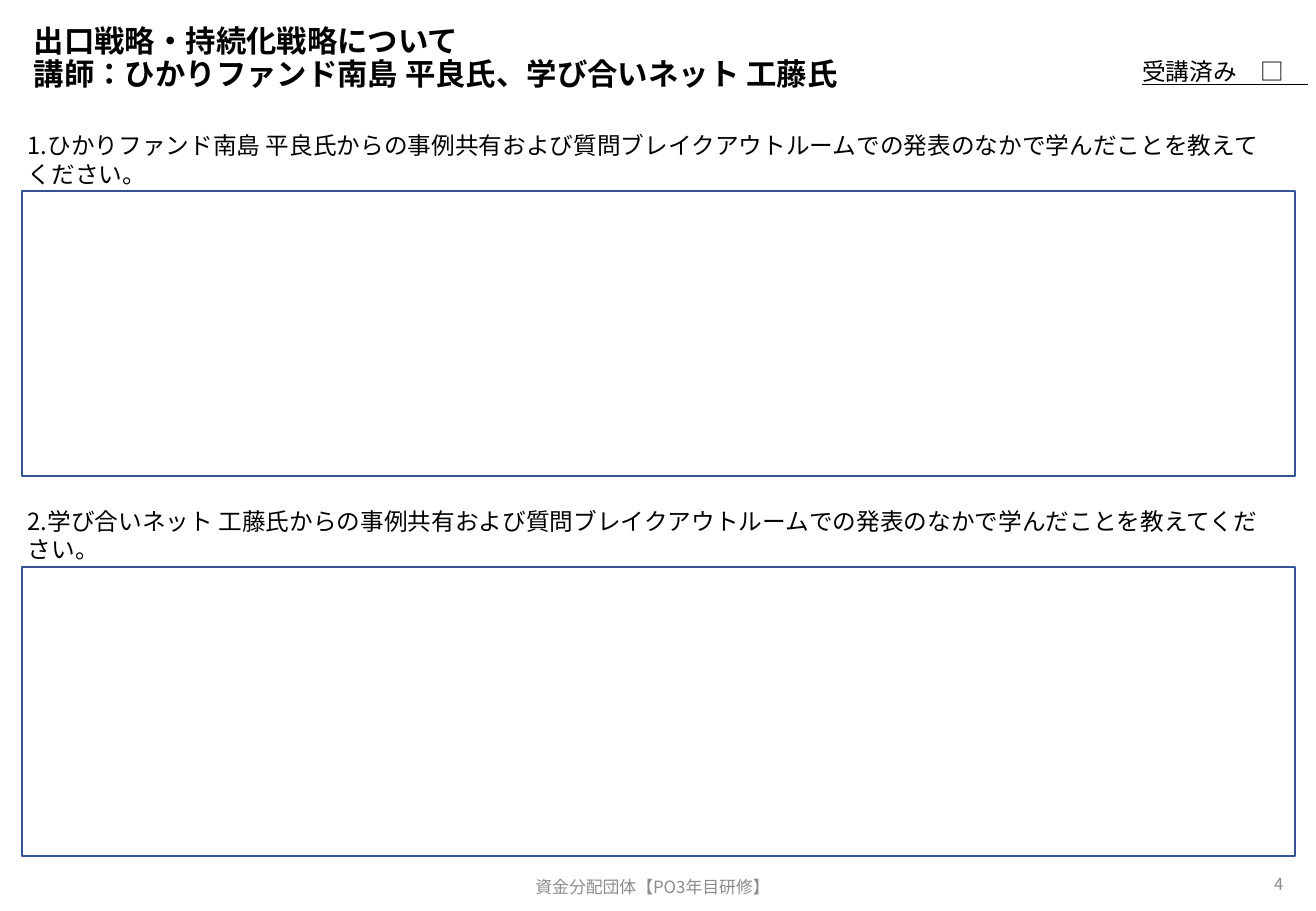
from typing import NamedTuple

from lxml.etree import SubElement
from pptx import Presentation
from pptx.dml.color import RGBColor
from pptx.enum.lang import MSO_LANGUAGE_ID as Lang
from pptx.enum.shapes import MSO_SHAPE as Shape
from pptx.enum.text import MSO_ANCHOR as Anchor, PP_ALIGN as Align
from pptx.oxml.ns import qn
from pptx.slide import Slide
from pptx.util import Emu, Pt

PX = 9144  # 100 px to the inch
FONT = "Noto Sans CJK JP"
BLACK = RGBColor(0x00, 0x00, 0x00)
GREY = RGBColor(0x8C, 0x8C, 0x8C)
WHITE = RGBColor(0xFF, 0xFF, 0xFF)
NAVY = RGBColor(0x32, 0x54, 0x91)


class Box(NamedTuple):
    left: int
    top: int
    width: int
    height: int

    def emu(self) -> list[Emu]:
        return [Emu(v * PX) for v in self]


class Question(NamedTuple):
    text: str
    label: Box
    answer: Box


FUND = "ひかりファンド南島 平良氏"
NETWORK = "学び合いネット 工藤氏"
ASK = "からの事例共有および質問ブレイクアウトルームでの発表のなかで学んだことを教えてください。"

QUESTIONS = [
    Question(f"1.{FUND}{ASK}", Box(13, 103, 1039, 57), Box(18, 157, 1048, 235)),
    Question(f"2.{NETWORK}{ASK}", Box(13, 412, 1048, 57), Box(18, 467, 1048, 238)),
]


def add_text(slide: Slide, text: str, box: Box, *, size: float = 14,
             color: RGBColor = BLACK, bold: bool = False,
             underline: bool = False, align: Align = Align.LEFT,
             anchor: Anchor = Anchor.TOP, spacing: float = 1.0) -> None:
    tf = slide.shapes.add_textbox(*box.emu()).text_frame
    tf.word_wrap = True
    tf.vertical_anchor = anchor
    p = tf.paragraphs[0]
    p.text = text
    p.alignment = align
    p.line_spacing = spacing
    for r in p.runs:
        font = r.font
        font.name = FONT
        font.size = Pt(size)
        font.bold = bold
        font.underline = underline
        font.color.rgb = color
        font.language_id = Lang.JAPANESE
        SubElement(r._r.get_or_add_rPr(), qn("a:ea"), typeface=FONT)


def add_answer_frame(slide: Slide, box: Box) -> None:
    sp = slide.shapes.add_shape(Shape.RECTANGLE, *box.emu())
    sp.shadow.inherit = False
    sp.fill.solid()
    sp.fill.fore_color.rgb = WHITE
    sp.line.color.rgb = NAVY
    sp.line.width = Pt(1)


def main() -> None:
    prs = Presentation()
    prs.slide_width, prs.slide_height = Emu(1083 * PX), Emu(750 * PX)
    slide = prs.slides.add_slide(prs.slide_layouts[6])

    add_text(slide, f"出口戦略・持続化戦略について\n講師：{FUND}、{NETWORK}",
             Box(18, 3, 934, 92), size=18, bold=True,
             anchor=Anchor.MIDDLE, spacing=0.9)
    add_text(slide, "受講済み　□　", Box(930, 42, 201, 34), underline=True)
    for question in QUESTIONS:
        add_answer_frame(slide, question.answer)
        add_text(slide, question.text, question.label)
    add_text(slide, "資金分配団体【PO3年目研修】", Box(354, 710, 366, 40),
             size=10, color=GREY, align=Align.CENTER, anchor=Anchor.MIDDLE)
    add_text(slide, "4", Box(822, 708, 244, 40),
             size=9.8, color=GREY, align=Align.RIGHT, anchor=Anchor.MIDDLE)

    prs.save("out.pptx")


if __name__ == "__main__":
    main()
